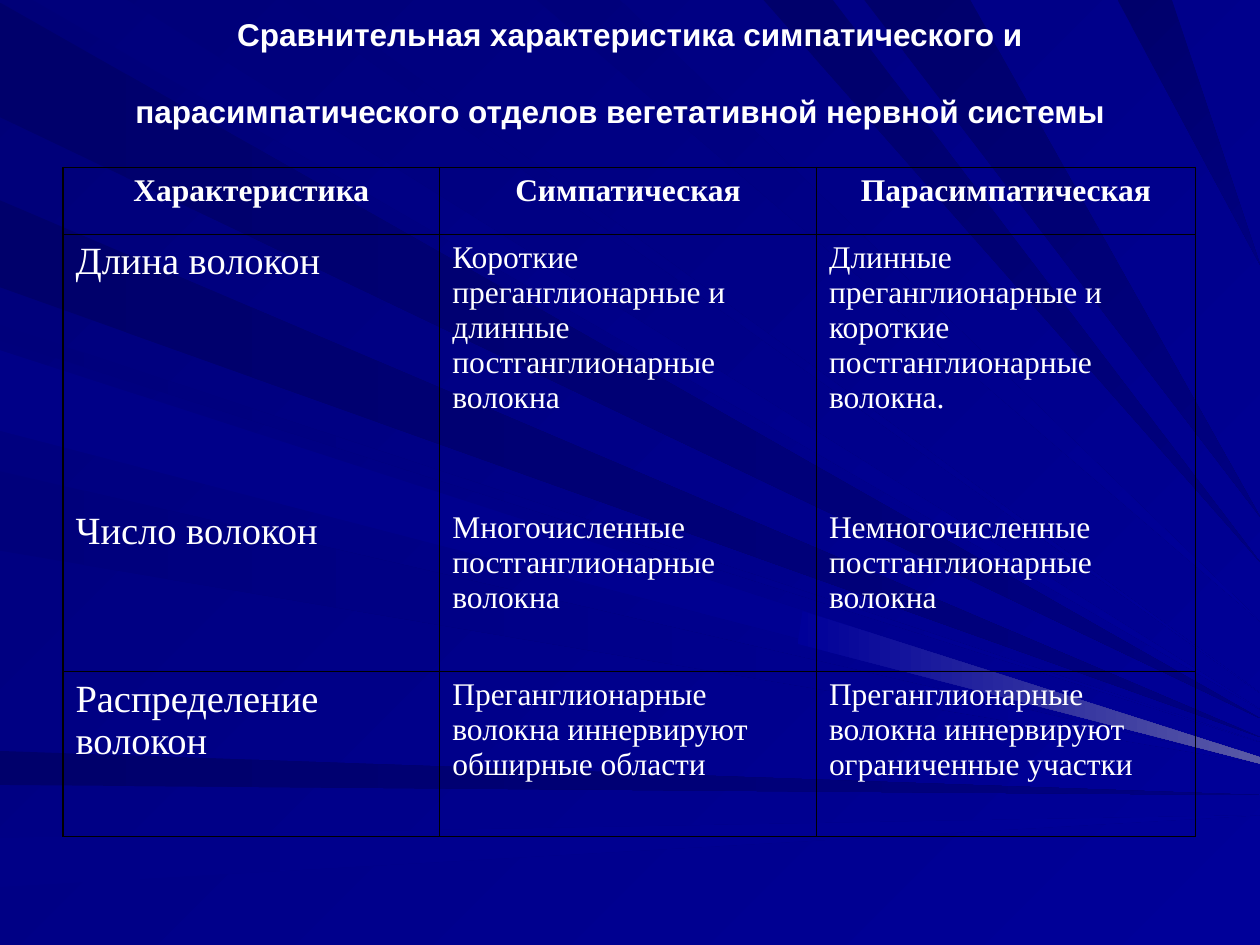
from lxml import etree
from pptx import Presentation, util as u
from pptx.dml.color import RGBColor
from pptx.enum import text
from pptx.oxml.ns import qn

COLORS = {"text": "FFFFFF", "border": "000000", "page": "000078",
          "shadow": "00006B", "soft": "00007B", "pale": "000087",
          "mid": "000080", "blue": "000099", "glow": "5A5AA6"}
WIDTH, HEIGHT = 10, 7.5

TITLE = ("Сравнительная характеристика симпатического и "
         "парасимпатического отделов вегетативной нервной системы")
COLUMN_WIDTHS = [2.99, 2.99, 3.01]
ROW_HEIGHTS = [0.53, 2.14, 1.33, 1.31]
ROWS = [
    ["Характеристика", "Симпатическая", "Парасимпатическая"],
    ["Длина волокон",
     "Короткие преганглионарные и длинные постганглионарные волокна",
     "Длинные преганглионарные и короткие постганглионарные волокна."],
    ["Число волокон",
     "Многочисленные постганглионарные волокна",
     "Немногочисленные постганглионарные волокна"],
    ["Распределение волокон",
     "Преганглионарные волокна иннервируют обширные области",
     "Преганглионарные волокна иннервируют ограниченные участки"],
]
OPEN_ROW = 1  # no rule is drawn between this row and the next

# Each ray narrows from a span on one edge to a height on the right edge:
# span start, span end, height at the right, shade
LEFT_RAYS = [
    (0.02, 0.93, 5.7, "shadow"),
    (5.96, 6.23, 6.31, "shadow"),
    (6.65, 7.04, 6.47, "pale"),
    (2.58, 2.7, 5.89, "soft"),
    (1.59, 2.28, 5.85, "shadow"),
    (2.78, 3.42, 6.02, "pale"),
    (3.74, 4.37, 6.06, "soft"),
]
TOP_RAYS = [
    (0.26, 1.01, 5.63, "soft"),
    (4.26, 4.92, 4.93, "soft"),
    (6.06, 6.61, 4.46, "shadow"),
    (8.87, 9.3, 2.1, "shadow"),
    (2.25, 2.47, 5.5, "soft"),
    (6.86, 7.7, 4.1, "shadow"),
]


def paint(fill, start, end, angle):
    """Fill with a gradient at a clockwise angle."""
    fill.gradient()
    fill.gradient_angle = -angle % 360
    for stop, shade, position in zip(fill.gradient_stops, (start, end), (0, 1)):
        stop.color.rgb = RGBColor.from_string(COLORS[shade])
        stop.position = position


def add_ray(group, corners, start, end, angle):
    points = [(u.Inches(x), u.Inches(y)) for x, y in corners]
    builder = group.shapes.build_freeform(*points[0])
    builder.add_line_segments(points[1:], close=True)
    ray = builder.convert_to_shape()
    ray.shadow.inherit = False
    ray.line.fill.background()
    paint(ray.fill, start, end, angle)


def add_rays(page):
    group = page.shapes.add_group_shape()
    for rays, on_left in ((LEFT_RAYS, True), (TOP_RAYS, False)):
        for first, last, height, shade in rays:
            span = [(0, place) if on_left else (place, 0) for place in (first, last)]
            end = "mid" if shade == "shadow" else "blue"
            add_ray(group, span + [(WIDTH, height)], shade, end, 0 if on_left else 45)
    # Bright tip at the right edge
    add_ray(group, [(6.37, 4.85), (6.33, 5.11), (WIDTH, 6.06), (WIDTH, 6.01)],
            "blue", "glow", 0)


def add_span(para, words, **font):
    span = para.add_run()
    span.text = words
    for name, value in font.items():
        setattr(span.font, name, value)
    span.font.color.rgb = RGBColor.from_string(COLORS["text"])


def set_title(page):
    title = page.shapes.title
    place = {"left": 0.5, "top": 0.21, "width": 9, "height": 0.79}
    for name, value in place.items():
        setattr(title, name, u.Inches(value))
    frame = title.text_frame
    frame.word_wrap = True
    frame.auto_size = text.MSO_AUTO_SIZE.NONE
    frame.vertical_anchor = text.MSO_ANCHOR.MIDDLE
    para = frame.paragraphs[0]
    para.alignment = text.PP_ALIGN.CENTER
    add_span(para, TITLE, name="Arial", size=u.Pt(18), bold=True)
    # The large closing space sets the height of the second line
    add_span(para, " ", name="Arial", size=u.Pt(40), bold=False)
    page.shapes._spTree.append(title._element)  # in front of the rays


def set_borders(cell, hidden):
    properties = cell._tc.get_or_add_tcPr()
    for index, side in enumerate(("lnL", "lnR", "lnT", "lnB")):
        line = etree.Element(qn("a:" + side), w=str(u.Pt(1)))
        if side in hidden:
            etree.SubElement(line, qn("a:noFill"))
        else:
            fill = etree.SubElement(line, qn("a:solidFill"))
            etree.SubElement(fill, qn("a:srgbClr"), val=COLORS["border"])
        properties.insert(index, line)


def add_comparison(page):
    frame = page.shapes.add_table(
        len(ROWS), len(COLUMN_WIDTHS), u.Inches(0.5), u.Inches(1.33),
        u.Inches(sum(COLUMN_WIDTHS)), u.Inches(sum(ROW_HEIGHTS)))
    table = frame.table
    table.first_row = table.horz_banding = False
    for column, width in zip(table.columns, COLUMN_WIDTHS):
        column.width = u.Inches(width)
    for r, (row, height) in enumerate(zip(table.rows, ROW_HEIGHTS)):
        row.height = u.Inches(height)
        hidden = {OPEN_ROW: ["lnB"], OPEN_ROW + 1: ["lnT"]}.get(r, [])
        header = r == 0
        for c, cell in enumerate(row.cells):
            cell.fill.background()
            set_borders(cell, hidden)
            para = cell.text_frame.paragraphs[0]
            para.alignment = text.PP_ALIGN.CENTER if header else text.PP_ALIGN.LEFT
            size = 22 if c == 0 and not header else 18
            add_span(para, ROWS[r][c], name="Times New Roman",
                     size=u.Pt(size), bold=header)


def main():
    deck = Presentation()
    deck.slide_width, deck.slide_height = u.Inches(WIDTH), u.Inches(HEIGHT)
    page = deck.slides.add_slide(deck.slide_layouts[5])
    # Background
    paint(page.background.fill, "page", "blue", 45)
    add_rays(page)
    # Content
    set_title(page)
    add_comparison(page)
    deck.save("out.pptx")


if __name__ == "__main__":
    main()
